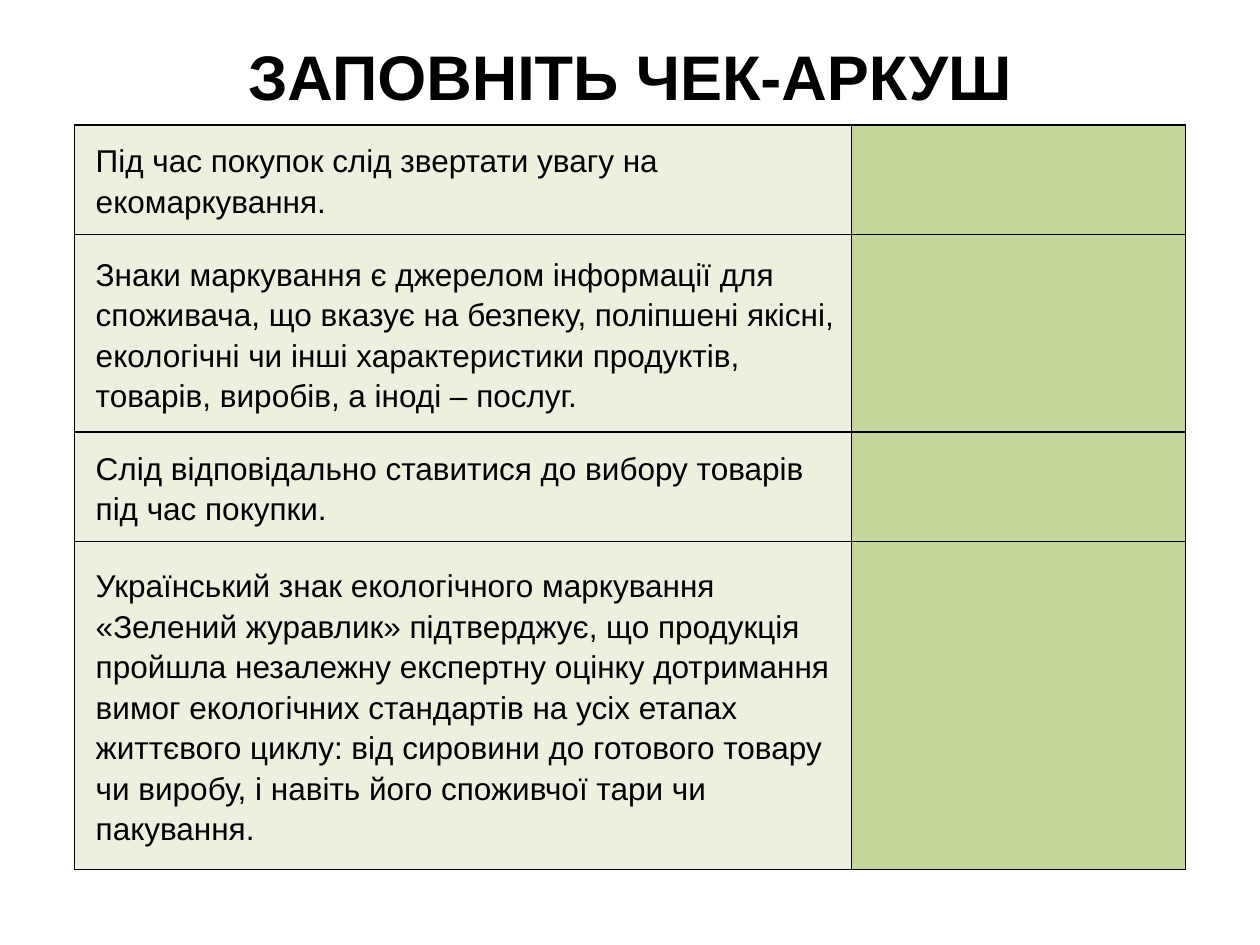
"""Builds a checklist slide: a title and a table of statements with blank answer cells."""
from dataclasses import dataclass

from pptx import Presentation
from pptx import util as u
from pptx.dml.color import RGBColor
from pptx.enum import text
from pptx.oxml import parse_xml
from pptx.oxml.ns import nsdecls


@dataclass(frozen=True)
class Theme:
    font: str = "Arial"
    ink: str = "000000"
    statement: str = "EBF1DE"
    answer: str = "C3D69B"
    title_size: int = 36
    body_size: int = 18
    border: int = 1


THEME = Theme()
TITLE = "ЗАПОВНІТЬ ЧЕК-АРКУШ"
STATEMENTS = [
    ("Під час покупок слід звертати увагу на екомаркування.", 0.87),
    ("Знаки маркування є джерелом інформації для споживача, що вказує на безпеку, "
     "поліпшені якісні, екологічні чи інші характеристики продуктів, товарів, "
     "виробів, а іноді – послуг.", 1.57),
    ("Слід відповідально ставитися до вибору товарів під час покупки.", 0.87),
    ("Український знак екологічного маркування «Зелений журавлик» підтверджує, "
     "що продукція пройшла незалежну експертну оцінку дотримання вимог екологічних "
     "стандартів на усіх етапах життєвого циклу: від сировини до готового товару "
     "чи виробу, і навіть його споживчої тари чи пакування.", 2.6),
]
COLUMNS = [6.17, 2.65]
SLIDE_W, SLIDE_H = 10, 7.5
TABLE_TOP = 0.99


def style(p, size, bold=False):
    p.font.name = THEME.font
    p.font.size = u.Pt(size)
    p.font.bold = bold
    p.font.color.rgb = RGBColor.from_string(THEME.ink)


def format_cell(cell, fill):
    tc_pr = cell._tc.get_or_add_tcPr()
    for side in ("lnL", "lnR", "lnT", "lnB"):
        tc_pr.append(parse_xml(
            f'<a:{side} {nsdecls("a")} w="{u.Pt(THEME.border)}"><a:solidFill>'
            f'<a:srgbClr val="{THEME.ink}"/></a:solidFill></a:{side}>'))
    cell.fill.solid()
    cell.fill.fore_color.rgb = RGBColor.from_string(fill)
    cell.vertical_anchor = text.MSO_ANCHOR.MIDDLE
    cell.margin_left = cell.margin_right = u.Inches(0.07)
    cell.margin_top = cell.margin_bottom = 0


def add_title(s):
    sp = s.shapes.title
    sp.left, sp.top = u.Inches(SLIDE_W * 0.05), u.Inches(-0.03)
    sp.width, sp.height = u.Inches(SLIDE_W * 0.9), u.Inches(SLIDE_H / 6)
    tf = sp.text_frame
    tf.text = TITLE
    tf.vertical_anchor = text.MSO_ANCHOR.MIDDLE
    p = tf.paragraphs[0]
    p.alignment = text.PP_ALIGN.CENTER
    style(p, THEME.title_size, bold=True)


def add_checklist(s):
    width = sum(COLUMNS)
    height = sum(h for _, h in STATEMENTS)
    table = s.shapes.add_table(
        len(STATEMENTS), len(COLUMNS), u.Inches((SLIDE_W - width) / 2),
        u.Inches(TABLE_TOP), u.Inches(width), u.Inches(height)).table
    table.first_row = table.horz_banding = False
    for column, w in zip(table.columns, COLUMNS):
        column.width = u.Inches(w)
    for row, (statement, h) in zip(table.rows, STATEMENTS):
        row.height = u.Inches(h)
        for cell, fill in zip(row.cells, (THEME.statement, THEME.answer)):
            format_cell(cell, fill)
        cell = row.cells[0]
        cell.text = statement
        p = cell.text_frame.paragraphs[0]
        p.line_spacing = 1.15
        p._p.get_or_add_pPr().set("marL", str(u.Inches(0.1)))
        style(p, THEME.body_size)


def main():
    prs = Presentation()
    prs.slide_width, prs.slide_height = u.Inches(SLIDE_W), u.Inches(SLIDE_H)
    s = prs.slides.add_slide(prs.slide_layouts[5])
    add_title(s)
    add_checklist(s)
    prs.save("out.pptx")


if __name__ == "__main__":
    main()
